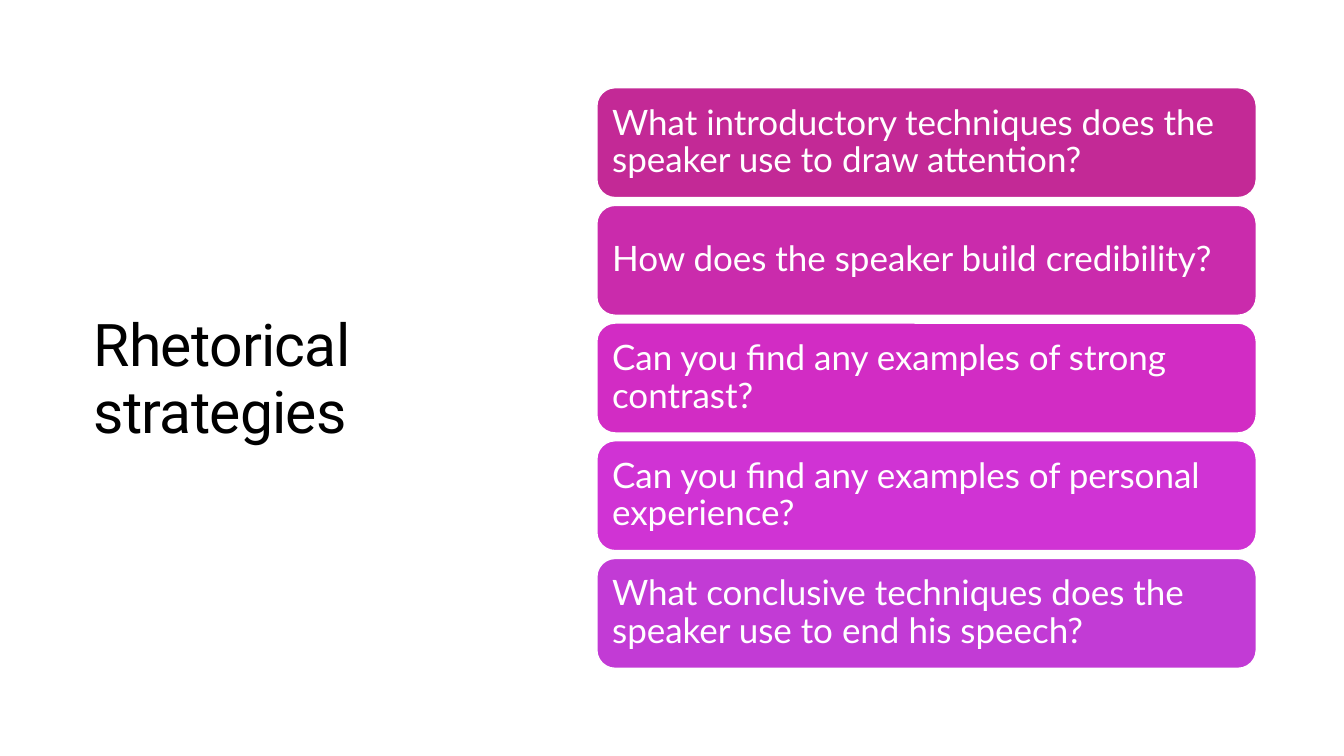
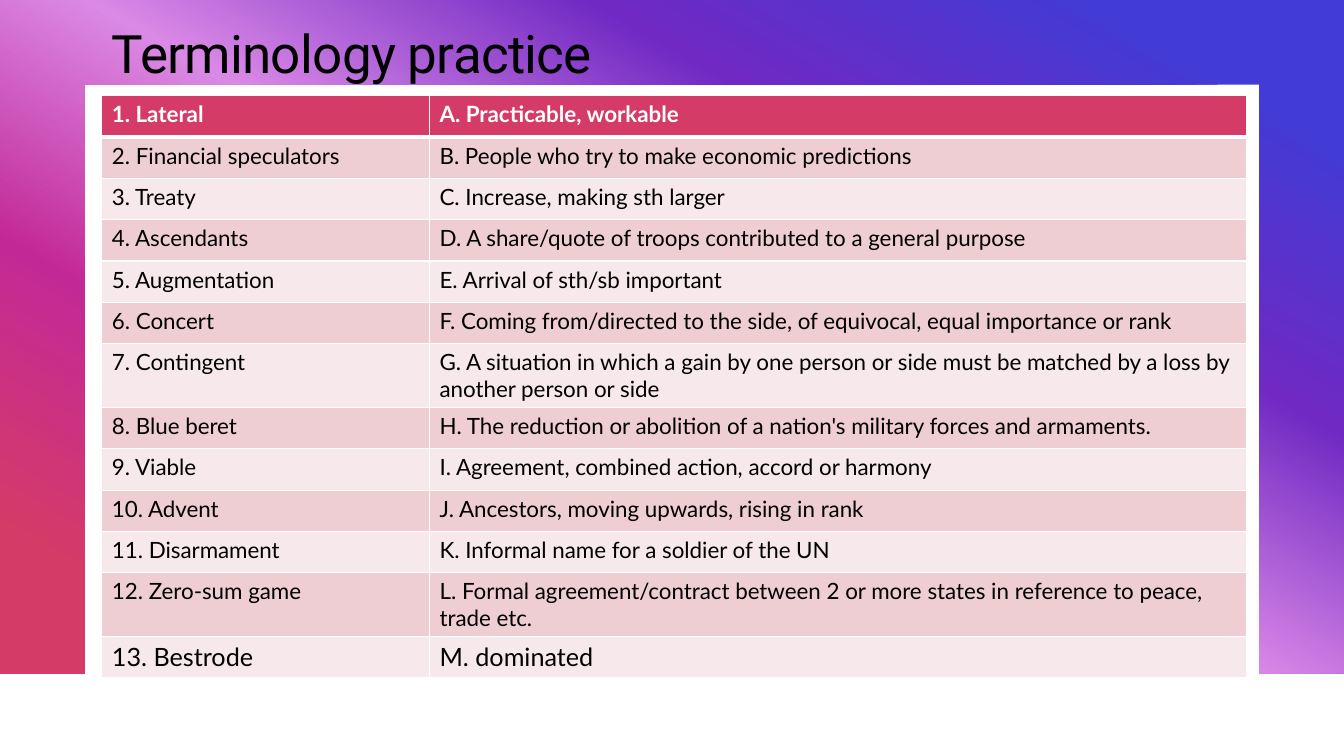
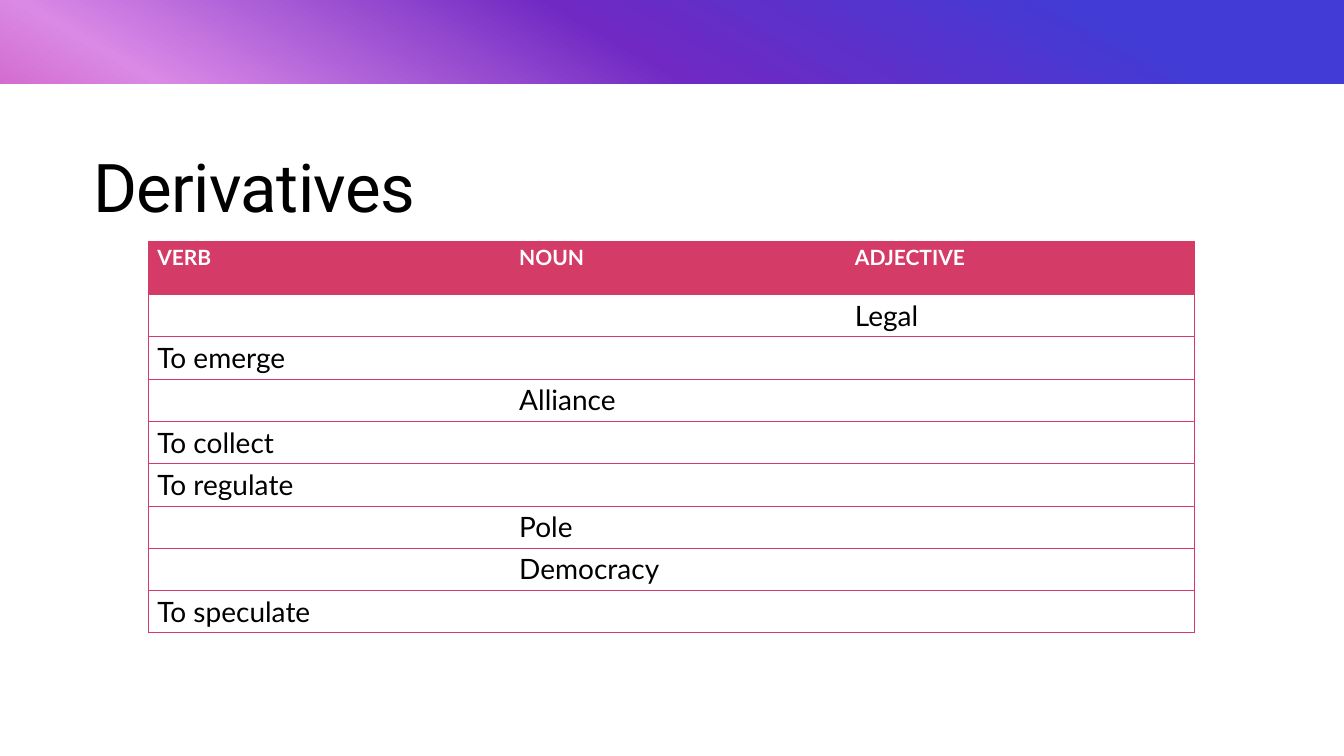
"""Build three slides on a speech: rhetorical strategies, terminology and derivatives."""
from pptx import Presentation
from pptx.dml.color import RGBColor
from pptx.enum.shapes import MSO_SHAPE as Shape
from pptx.enum.text import MSO_ANCHOR as Anchor, PP_ALIGN as Align
from pptx.oxml import parse_xml
from pptx.oxml.ns import nsdecls, qn
from pptx.util import Inches, Pt

WHITE = RGBColor(0xFF, 0xFF, 0xFF)
BLACK = RGBColor(0x00, 0x00, 0x00)
CRIMSON = RGBColor(0xD5, 0x3B, 0x67)
ROSE = RGBColor(0xEF, 0xCE, 0xD3)
BLUSH = RGBColor(0xF7, 0xE8, 0xEB)
MAGENTA = RGBColor(0xC3, 0x29, 0x96)
ORCHID = RGBColor(0xDA, 0x89, 0xE6)
VIOLET = RGBColor(0x70, 0x29, 0xC3)
BLUE = RGBColor(0x42, 0x3B, 0xD5)
RAINBOW = [(10, BLUE), (30, VIOLET), (50, ORCHID), (70, MAGENTA), (90, CRIMSON)]

HEADING_FONT, BODY_FONT = "Roboto", "Lato"
PLAIN_TABLE = "{2D5ABB26-0587-4C30-8999-92F81FD0307C}"
WIDTH, HEIGHT = 13.33, 7.5


def add_title(slide, text, size, left, top, width, height, anchor):
    box = slide.shapes.add_textbox(Inches(left), Inches(top), Inches(width), Inches(height))
    box.text_frame.word_wrap = True
    box.text_frame.vertical_anchor = anchor
    paragraph = box.text_frame.paragraphs[0]
    paragraph.line_spacing = 0.95
    run = paragraph.add_run()
    run.text = text
    run.font.name, run.font.size = HEADING_FONT, Pt(size)
    run.font.color.rgb = BLACK
    run.font._element.set("spc", "-50")


def fill_cell(cell, text, size, is_header, fill, line_color, edges):
    if text:
        run = cell.text_frame.paragraphs[0].add_run()
        run.text = text
        run.font.name, run.font.size, run.font.bold = BODY_FONT, Pt(size), is_header
        run.font.color.rgb = WHITE if is_header else BLACK
    if fill is None:
        cell.fill.background()
    else:
        cell.fill.solid()
        cell.fill.fore_color.rgb = fill
    properties = cell._tc.get_or_add_tcPr()
    for position, (side, points) in enumerate(edges):
        properties.insert(position, parse_xml(
            f'<a:ln{side} {nsdecls("a")} w="{Pt(points)}"><a:solidFill>'
            f'<a:srgbClr val="{line_color}"/></a:solidFill></a:ln{side}>'))


deck = Presentation()
deck.slide_width, deck.slide_height = Inches(WIDTH), Inches(HEIGHT)
strategies, terminology, derivatives = [
    deck.slides.add_slide(deck.slide_layouts[6]) for _ in range(3)]

BORDER, FRAME_BOTTOM = 0.84, 6.68
outline = [(WIDTH, 0), (WIDTH, FRAME_BOTTOM), (WIDTH - BORDER, FRAME_BOTTOM),
           (WIDTH - BORDER, BORDER), (BORDER, BORDER), (BORDER, FRAME_BOTTOM),
           (0, FRAME_BOTTOM)]
builder = terminology.shapes.build_freeform(0, 0)
builder.add_line_segments([(Inches(x), Inches(y)) for x, y in outline], close=True)
frame = builder.convert_to_shape()
backdrop = derivatives.shapes.add_shape(
    Shape.RECTANGLE, 0, 0, Inches(WIDTH), Inches(HEIGHT))
for surface in (frame, backdrop):
    surface.shadow.inherit = False
    surface.line.fill.background()
    surface.fill.gradient()
    surface.fill.gradient_angle = 240
    stops = surface._element.spPr.find(qn("a:gradFill")).find(qn("a:gsLst"))
    for stop in list(stops):
        stops.remove(stop)
    for percent, color in RAINBOW:
        stops.append(parse_xml(
            f'<a:gs {nsdecls("a")} pos="{percent * 1000}"><a:srgbClr val="{color}"/></a:gs>'))

add_title(strategies, "Rhetorical strategies", 42, 0.83, 0.85, 4.27, 5.84, Anchor.MIDDLE)
questions = [
    ("What introductory techniques does the speaker use to draw attention?", MAGENTA),
    ("How does the speaker build credibility?", RGBColor(0xCA, 0x2B, 0xAC)),
    ("Can you find any examples of strong contrast?", RGBColor(0xD2, 0x2C, 0xC4)),
    ("Can you find any examples of personal experience?", RGBColor(0xD0, 0x33, 0xD4)),
    ("What conclusive techniques does the speaker use to end his speech?",
     RGBColor(0xC2, 0x3B, 0xD5)),
]
CARDS_TOP, CARDS_BOTTOM, CARD_HEIGHT = 0.87, 6.63, 1.09
pitch = (CARDS_BOTTOM - CARDS_TOP - CARD_HEIGHT) / (len(questions) - 1)
for index, (question, color) in enumerate(questions):
    card = strategies.shapes.add_shape(
        Shape.ROUNDED_RECTANGLE, Inches(5.92), Inches(CARDS_TOP + index * pitch),
        Inches(6.54), Inches(CARD_HEIGHT))
    card.shadow.inherit = False
    card.fill.solid()
    card.fill.fore_color.rgb = color
    card.line.color.rgb, card.line.width = WHITE, Pt(1)
    words = card.text_frame
    words.word_wrap, words.vertical_anchor = True, Anchor.MIDDLE
    words.margin_left = words.margin_right = Inches(0.1)
    words.margin_top = words.margin_bottom = Inches(0.1)
    paragraph = words.paragraphs[0]
    paragraph.alignment, paragraph.line_spacing = Align.LEFT, 0.9
    run = paragraph.add_run()
    run.text = question
    run.font.name, run.font.size = BODY_FONT, Pt(25)
    run.font.color.rgb = WHITE

add_title(terminology, "Terminology practice", 37.8, 1.01, 0.2, 10, 0.63, Anchor.TOP)
terms = [
    ("1. Lateral", "A. Practicable, workable"),
    ("2. Financial speculators", "B. People who try to make economic predictions"),
    ("3. Treaty", "C. Increase, making sth larger"),
    ("4. Ascendants", "D. A share/quote of troops contributed to a general purpose"),
    ("5. Augmentation", "E. Arrival of sth/sb important"),
    ("6. Concert",
     "F. Coming from/directed to the side, of equivocal, equal importance or rank"),
    ("7. Contingent", "G. A situation in which a gain by one person or side must be "
                      "matched by a loss by another person or side"),
    ("8. Blue beret",
     "H. The reduction or abolition of a nation's military forces and armaments."),
    ("9. Viable", "I. Agreement, combined action, accord or harmony"),
    ("10. Advent", "J. Ancestors, moving upwards, rising in rank"),
    ("11. Disarmament", "K. Informal name for a soldier of the UN"),
    ("12. Zero-sum game", "L. Formal agreement/contract between 2 or more states in "
                          "reference to peace, trade etc."),
    ("13. Bestrode", "M. dominated"),
]
forms = [
    ("VERB", "NOUN", "ADJECTIVE"),
    ("", "", "Legal"),
    ("To emerge", "", ""),
    ("", "Alliance", ""),
    ("To collect", "", ""),
    ("To regulate", "", ""),
    ("", "Pole", ""),
    ("", "Democracy", ""),
    ("To speculate", "", ""),
]

cover = derivatives.shapes.add_shape(
    Shape.RECTANGLE, 0, Inches(HEIGHT / 9), Inches(WIDTH), Inches(HEIGHT * 8 / 9))
cover.shadow.inherit = False
cover.fill.solid()
cover.fill.fore_color.rgb = WHITE
cover.line.fill.background()
add_title(derivatives, "Derivatives", 48, 0.83, 1.26, 11.67, 1.05, Anchor.BOTTOM)

grids = []
for slide, rows, left, top, columns, row_height in (
        (terminology, terms, 1.01, 0.95, (3.25, 8.1), 0.41),
        (derivatives, forms, 1.47, 2.39, (3.59, 3.33, 3.46), 0.42)):
    holder = slide.shapes.add_table(
        len(rows), len(columns), Inches(left), Inches(top),
        Inches(sum(columns)), Inches(row_height * len(rows)))
    grid = holder.table
    grid.first_row = grid.horz_banding = False
    grid._tbl.tblPr.find(qn("a:tableStyleId")).text = PLAIN_TABLE
    for column, width in zip(grid.columns, columns):
        column.width = Inches(width)
    for row in grid.rows:
        row.height = Inches(row_height)
    grids.append(grid)
term_grid, form_grid = grids

for r, entry in enumerate(terms):
    if len(entry[1]) > 80:
        term_grid.rows[r].height = Inches(0.62)
    fill = CRIMSON if r == 0 else (BLUSH, ROSE)[r % 2]
    size = 18 if r == len(terms) - 1 else 16
    edges = [("L", 1), ("R", 1), ("T", 3 if r == 1 else 1), ("B", 3 if r == 0 else 1)]
    for c, text in enumerate(entry):
        fill_cell(term_grid.cell(r, c), text, size, r == 0, fill, WHITE, edges)

form_grid.rows[0].height = Inches(0.53)
for r, entry in enumerate(forms):
    for c, text in enumerate(entry):
        cell = form_grid.cell(r, c)
        cell.margin_left = cell.margin_right = Inches(0.09)
        cell.margin_top = cell.margin_bottom = Inches(0.04)
        outer = {0: [("L", 0.5)], len(entry) - 1: [("R", 0.5)]}.get(c, [])
        fill_cell(cell, text, 15 if r == 0 else 20, r == 0, CRIMSON if r == 0 else None,
                  CRIMSON, outer + [("T", 0.5), ("B", 0.5)])

deck.save("out.pptx")
